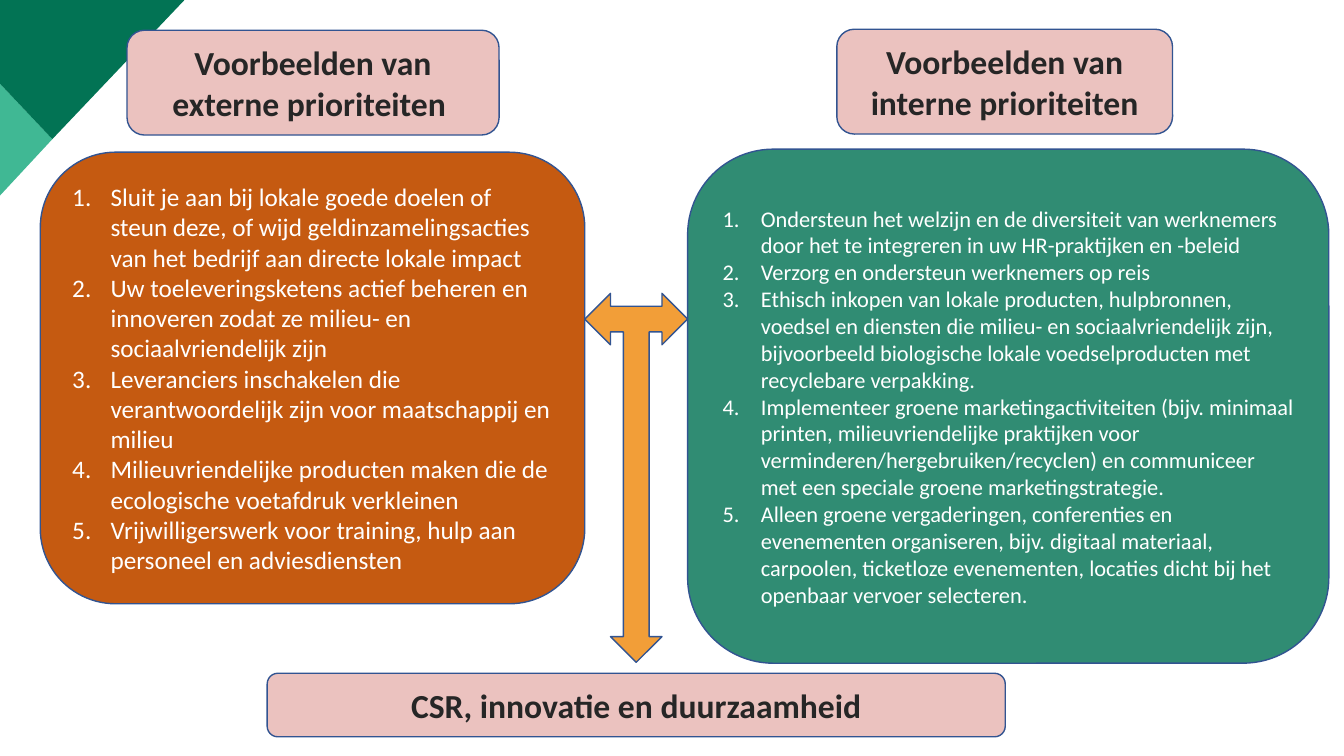
from pptx import Presentation
from pptx import util as u
from pptx.dml.color import RGBColor
from pptx.enum import shapes, text
from pptx.oxml.ns import qn
from lxml import etree

PX = 9144  # EMU per px, 100 px to the inch
ROUND = shapes.MSO_SHAPE.ROUNDED_RECTANGLE
PINK, ORANGE, GREEN, AMBER = "EBC2BF", "C55A11", "308C73", "F29E38"
OUTLINE, DARK, WHITE = "325491", "262626", "FFFFFF"

EXTERNAL = [
    "Sluit je aan bij lokale goede doelen of steun deze, of wijd geldinzamelingsacties "
    "van het bedrijf aan directe lokale impact",
    "Uw toeleveringsketens actief beheren en innoveren zodat ze milieu- en "
    "sociaalvriendelijk zijn",
    "Leveranciers inschakelen die verantwoordelijk zijn voor maatschappij en milieu",
    "Milieuvriendelijke producten maken die de ecologische voetafdruk verkleinen",
    "Vrijwilligerswerk voor training, hulp aan personeel en adviesdiensten",
]
INTERNAL = [
    "Ondersteun het welzijn en de diversiteit van werknemers door het te integreren in "
    "uw HR-praktijken en -beleid",
    "Verzorg en ondersteun werknemers op reis",
    "Ethisch inkopen van lokale producten, hulpbronnen, voedsel en diensten die milieu- "
    "en sociaalvriendelijk zijn, bijvoorbeeld biologische lokale voedselproducten met "
    "recyclebare verpakking.",
    "Implementeer groene marketingactiviteiten (bijv. minimaal printen, "
    "milieuvriendelijke praktijken voor verminderen/hergebruiken/recyclen) en "
    "communiceer met een speciale groene marketingstrategie.",
    "Alleen groene vergaderingen, conferenties en evenementen organiseren, bijv. "
    "digitaal materiaal, carpoolen, ticketloze evenementen, locaties dicht bij het "
    "openbaar vervoer selecteren.",
]


def color(value):
    return RGBColor.from_string(value)


def paint(sp, fill, line=None):
    sp.shadow.inherit = False
    sp.fill.solid()
    sp.fill.fore_color.rgb = color(fill)
    if line:
        sp.line.color.rgb = color(line)
        sp.line.width = u.Pt(1)
    else:
        sp.line.fill.background()


def add_block(s, kind, box, fill):
    sp = s.shapes.add_shape(kind, *(v * PX for v in box))
    paint(sp, fill, OUTLINE)
    return sp


def write(p, words, align, size, ink, bold=False):
    p.alignment = align
    r = p.add_run()
    r.text = words
    r.font.color.rgb = color(ink)
    for name, value in {"name": "Calibri", "size": u.Pt(size), "bold": bold}.items():
        setattr(r.font, name, value)


def number(p):
    pPr = p._p.get_or_add_pPr()
    for name, px in {"marL": 38, "indent": -38}.items():
        pPr.set(name, str(px * PX))
    etree.SubElement(pPr, qn("a:buFont"), typeface="Calibri")
    etree.SubElement(pPr, qn("a:buAutoNum"), type="arabicPeriod")


def text_frame(sp):
    tf = sp.text_frame
    tf.word_wrap = True
    tf.vertical_anchor = text.MSO_ANCHOR.MIDDLE
    return tf


def corner(s, left, top):
    """Two green facets that fill the corner at left, top."""
    facets = [
        ("40B894", [(0, 83), (52, 138), (0, 194)]),
        ("027354", [(0, 0), (183, 0), (52, 138), (0, 83)]),
    ]
    for fill, points in facets:
        points = [(left + x, top + y) for x, y in points]
        builder = s.shapes.build_freeform(*points[0], scale=PX)
        builder.add_line_segments(points[1:], close=True)
        paint(builder.convert_to_shape(), fill)


def heading(s, box, words):
    tf = text_frame(add_block(s, ROUND, box, PINK))
    write(tf.paragraphs[0], words, text.PP_ALIGN.CENTER, 24, DARK, bold=True)


def priorities(s, box, fill, items, size):
    tf = text_frame(add_block(s, ROUND, box, fill))
    for i, item in enumerate(items):
        p = tf.add_paragraph() if i else tf.paragraphs[0]
        write(p, item, text.PP_ALIGN.LEFT, size, WHITE)
        number(p)


def junction(s, box):
    """Arrow to both panels and down to the conclusion."""
    sp = add_block(s, shapes.MSO_SHAPE.LEFT_RIGHT_UP_ARROW, box, AMBER)
    sp.rotation = 180


def main():
    prs = Presentation()
    prs.slide_width, prs.slide_height = u.Inches(13.33), u.Inches(7.5)
    s = prs.slides.add_slide(prs.slide_layouts[6])

    corner(s, 0, 0)
    # External side
    heading(s, (126, 30, 369, 104), "Voorbeelden van externe prioriteiten ")
    priorities(s, (40, 151, 540, 448), ORANGE, EXTERNAL, 18)
    # Internal side
    priorities(s, (682, 148, 636, 510), GREEN, INTERNAL, 16)
    heading(s, (830, 29, 333, 104), "Voorbeelden van interne prioriteiten")
    # Conclusion
    junction(s, (580, 291, 102, 366))
    heading(s, (265, 668, 732, 63), "CSR, innovatie en duurzaamheid")

    prs.save("out.pptx")


if __name__ == "__main__":
    main()
